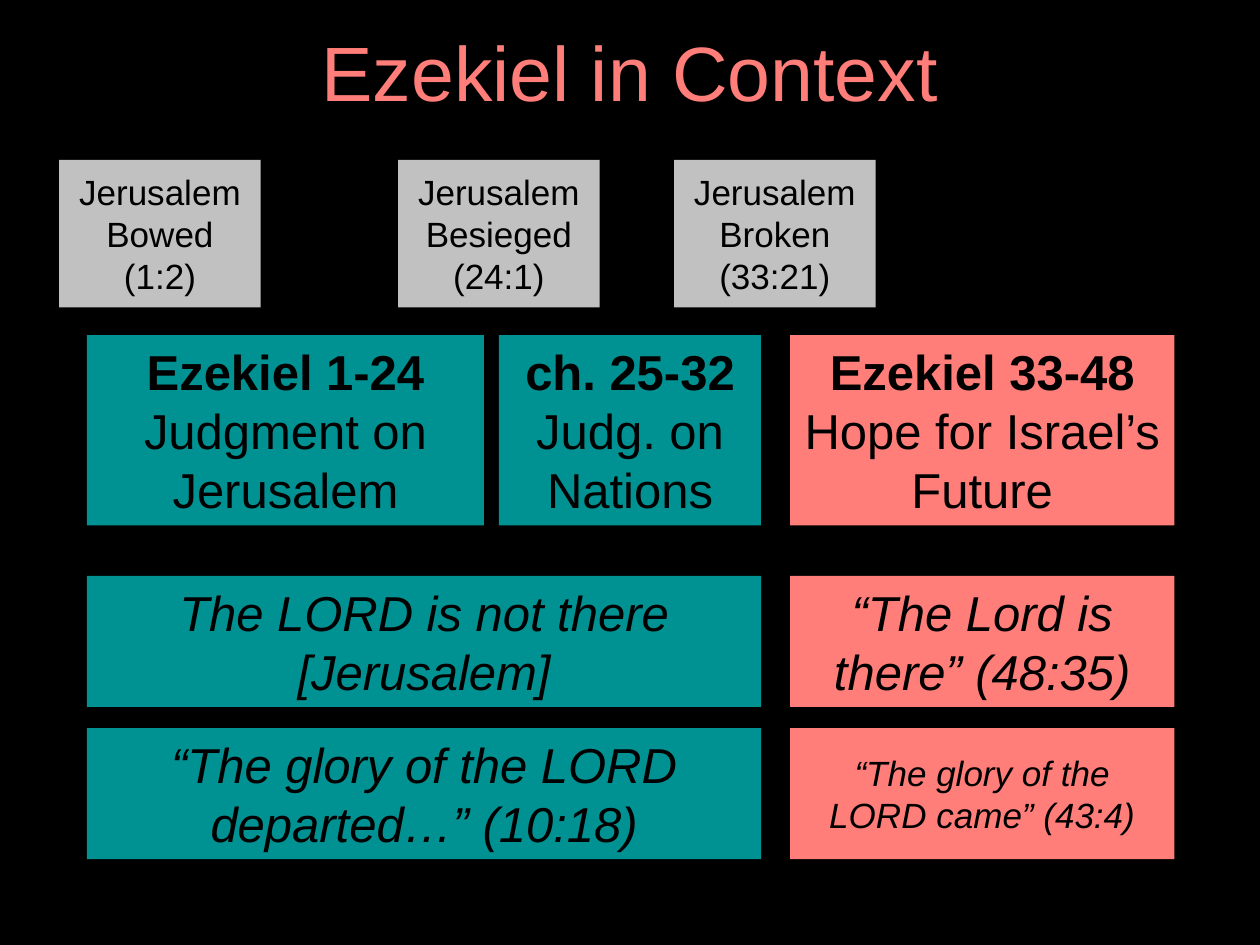
"""Build the slide that sets Ezekiel's message beside the fall of Jerusalem."""
from dataclasses import dataclass

from pptx import Presentation
from pptx.dml.color import RGBColor
from pptx.enum.shapes import MSO_SHAPE as Shape
from pptx.enum.text import MSO_ANCHOR as Anchor, PP_ALIGN as Align
from pptx.util import Inches, Pt


@dataclass(frozen=True)
class Theme:
    font: str = "Arial"
    background: RGBColor = RGBColor(0x00, 0x00, 0x00)
    ink: RGBColor = RGBColor(0x00, 0x00, 0x00)
    hope: RGBColor = RGBColor(0xFF, 0x7E, 0x79)
    judgment: RGBColor = RGBColor(0x00, 0x91, 0x93)
    event: RGBColor = RGBColor(0xC1, 0xC1, 0xC1)
    title_size: int = 44
    body_size: int = 28
    small_size: int = 20


THEME = Theme()

LEFT, NATIONS_LEFT, HOPE_LEFT = 0.69, 3.96, 6.27
JUDGMENT_WIDTH, HOPE_WIDTH = 5.35, 3.05
EVENT_TOP, EVENT_WIDTH, EVENT_HEIGHT = 1.27, 1.6, 1.17
SECTION_TOP, SECTION_HEIGHT = 2.66, 1.51
PRESENCE_TOP, GLORY_TOP, QUOTE_HEIGHT = 4.57, 5.78, 1.04

EVENTS = [
    (0.47, "Jerusalem Bowed", "(1:2)"),
    (3.16, "Jerusalem Besieged", "(24:1)"),
    (5.35, "Jerusalem Broken", "(33:21)"),
]
SECTIONS = [
    (LEFT, 3.15, THEME.judgment, "Ezekiel 1-24", "Judgment on Jerusalem"),
    (NATIONS_LEFT, 2.08, THEME.judgment, "ch. 25-32", "Judg. on Nations"),
    (HOPE_LEFT, HOPE_WIDTH, THEME.hope, "Ezekiel 33-48", "Hope for Israel’s Future"),
]
QUOTES = [
    (PRESENCE_TOP, "The LORD is not there [Jerusalem]",
     "“The Lord is there” (48:35)", THEME.body_size),
    (GLORY_TOP, "“The glory of the LORD departed…” (10:18)",
     "“The glory of the LORD came” (43:4)", THEME.small_size),
]


def write_lines(frame, lines, size, color):
    """Fill a text frame with centred paragraphs and return them."""
    frame.word_wrap = True
    frame.text = "\n".join(lines)
    for paragraph in frame.paragraphs:
        paragraph.alignment = Align.CENTER
        paragraph.font.name = THEME.font
        paragraph.font.size = Pt(size)
        paragraph.font.color.rgb = color
    return frame.paragraphs


def add_title(slide, wording):
    """Add the heading across the top."""
    heading = slide.shapes.add_textbox(
        Inches(LEFT), Inches(0.16), Inches(8.62), Inches(0.9))
    heading.text_frame.vertical_anchor = Anchor.MIDDLE
    line, = write_lines(heading.text_frame, [wording], THEME.title_size, THEME.hope)
    line.line_spacing = 0.9


def add_panel(slide, bounds, fill, lines, size, anchor=Anchor.TOP):
    """Add a filled rectangle with text and return its paragraphs."""
    panel = slide.shapes.add_shape(Shape.RECTANGLE, *map(Inches, bounds))
    panel.shadow.inherit = False
    panel.fill.solid()
    panel.fill.fore_color.rgb = fill
    panel.line.fill.background()
    panel.text_frame.vertical_anchor = anchor
    return write_lines(panel.text_frame, lines, size, THEME.ink)


def add_event(slide, left, event, verse):
    """Add one stage of Jerusalem's fall."""
    bounds = (left, EVENT_TOP, EVENT_WIDTH, EVENT_HEIGHT)
    add_panel(slide, bounds, THEME.event, [event, verse],
              THEME.small_size, Anchor.MIDDLE)


def add_section(slide, left, width, fill, chapters, theme):
    """Add one section of the book under its bold chapter range."""
    bounds = (left, SECTION_TOP, width, SECTION_HEIGHT)
    heading, _ = add_panel(slide, bounds, fill, [chapters, theme], THEME.body_size)
    heading.font.bold = True


def add_quote_pair(slide, top, judgment, hope, hope_size):
    """Add a judgment saying beside its answering hope, both in italics."""
    for left, width, fill, saying, size in (
        (LEFT, JUDGMENT_WIDTH, THEME.judgment, judgment, THEME.body_size),
        (HOPE_LEFT, HOPE_WIDTH, THEME.hope, hope, hope_size),
    ):
        bounds = (left, top, width, QUOTE_HEIGHT)
        line, = add_panel(slide, bounds, fill, [saying], size, Anchor.MIDDLE)
        line.font.italic = True


def main():
    """Build and save the slide."""
    deck = Presentation()
    deck.slide_width, deck.slide_height = Inches(10), Inches(7.5)
    slide = deck.slides.add_slide(deck.slide_layouts[6])
    slide.background.fill.solid()
    slide.background.fill.fore_color.rgb = THEME.background

    add_title(slide, "Ezekiel in Context")
    for section in SECTIONS:
        add_section(slide, *section)
    for event in EVENTS:
        add_event(slide, *event)
    for quote_pair in QUOTES:
        add_quote_pair(slide, *quote_pair)

    deck.save("out.pptx")


if __name__ == "__main__":
    main()
